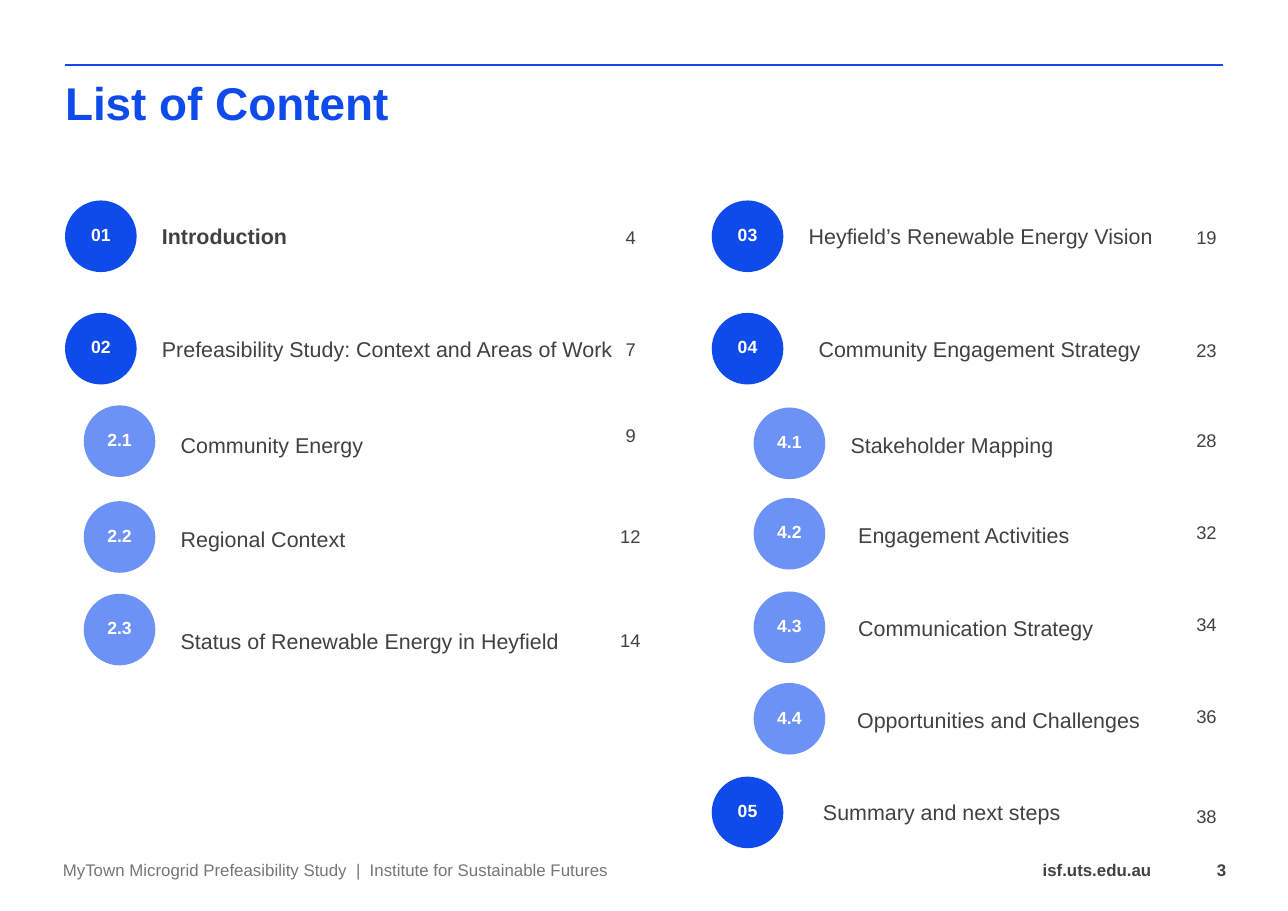
from pptx import Presentation
from pptx.dml.color import RGBColor
from pptx.enum.shapes import MSO_CONNECTOR as Connector, MSO_SHAPE as Shape
from pptx.enum.text import MSO_ANCHOR as Anchor, PP_ALIGN as Align
from pptx.oxml.ns import qn
from pptx.util import Inches, Pt
from lxml import etree

WIDTH, HEIGHT = 11.69, 8.27
MARGIN = 0.59
CONTENT_WIDTH = WIDTH - 2 * MARGIN
BADGE = 0.65
HEADING_INDENT = 0.88
FONT = "Arial"
COLOURS = {
    "main": "0F4BEB",
    "sub": "6C92F6",
    "text": "414042",
    "footer": "767676",
    "white": "FFFFFF",
}

TITLE = "List of Content"
FOOTER = "MyTown Microgrid Prefeasibility Study  |  Institute for Sustainable Futures"
WEBSITE = "isf.uts.edu.au"
PAGE_NUMBER = "3"

# Each entry: number, heading, page, badge top, heading shift (right, down), page drop
COLUMNS = [
    {
        "main_left": MARGIN, "sub_left": 0.76, "page_left": 5.53, "digit_shift": 0.05,
        "entries": [
            ("01", "Introduction", "4", 1.82, (0, 0), 0.18),
            ("02", "Prefeasibility Study: Context and Areas of Work", "7", 2.84, (0, 0), 0.18),
            ("2.1", "Community Energy", "9", 3.68, (0, 0.03), 0.12),
            ("2.2", "Regional Context", "12", 4.55, (0, 0.02), 0.17),
            ("2.3", "Status of Renewable Energy in Heyfield", "14", 5.39, (0, 0.1), 0.27),
        ],
    },
    {
        "main_left": 6.46, "sub_left": 6.84, "page_left": 10.76, "digit_shift": 0,
        "entries": [
            ("03", "Heyfield’s Renewable Energy Vision", "19", 1.82, (0, 0), 0.18),
            ("04", "Community Engagement Strategy", "23", 2.84, (0.09, 0), 0.19),
            ("4.1", "Stakeholder Mapping", "28", 3.7, (0, 0.01), 0.15),
            ("4.2", "Engagement Activities", "32", 4.52, (0.07, 0.01), 0.16),
            ("4.3", "Communication Strategy", "34", 5.37, (0.07, 0.01), 0.15),
            ("4.4", "Opportunities and Challenges", "36", 6.2, (0.06, 0.01), 0.15),
            ("05", "Summary and next steps", "38", 7.05, (0.13, 0), 0.21),
        ],
    },
]


def write(shape, text, size, colour="text", bold=False, align=Align.LEFT,
          anchor=Anchor.MIDDLE, inset=(0, 0), indent=0, spacing=None):
    frame = shape.text_frame
    frame.word_wrap = True
    frame.vertical_anchor = anchor
    frame.margin_left = frame.margin_right = Inches(inset[0])
    frame.margin_top = frame.margin_bottom = Inches(inset[1])
    frame.text = text
    paragraph = frame.paragraphs[0]
    paragraph.alignment = align
    if indent:
        properties = paragraph._p.get_or_add_pPr()
        properties.set("marL", str(Inches(indent)))
        properties.set("indent", "0")
    if spacing:
        paragraph.line_spacing = spacing
    font = paragraph.runs[0].font
    font.name, font.size, font.bold = FONT, Pt(size), bold
    font.color.rgb = RGBColor.from_string(COLOURS[colour])


def add_text(slide, box, text, size, **style):
    write(slide.shapes.add_textbox(*map(Inches, box)), text, size, **style)


def add_badge(slide, left, top, number, colour):
    badge = slide.shapes.add_shape(Shape.OVAL, *map(Inches, (left, top, BADGE, BADGE)))
    badge.shadow.inherit = False
    badge.fill.solid()
    badge.fill.fore_color.rgb = RGBColor.from_string(COLOURS[colour])
    badge.line.fill.background()
    write(badge, number, 11.5, colour="white", bold=True, align=Align.CENTER,
          spacing=Pt(11.5))


def add_entry(slide, column, number, heading, page, top, shift, page_drop):
    level = "sub" if "." in number else "main"
    left = column[f"{level}_left"]
    heading_width = 5 if level == "main" else 4.4
    heading_box = (left + shift[0], top + shift[1], heading_width, BADGE)
    add_text(slide, heading_box, heading, 14, bold=number == "01", indent=HEADING_INDENT)
    add_badge(slide, left, top, number, level)
    page_left = column["page_left"] + column["digit_shift"] * (len(page) == 1)
    add_text(slide, (page_left, top + page_drop, 0.5, 0.3), page, 12,
             anchor=Anchor.TOP, inset=(0.1, 0.05))


def add_rule(slide):
    rule = slide.shapes.add_connector(
        Connector.STRAIGHT, *map(Inches, (MARGIN, MARGIN, WIDTH - MARGIN, MARGIN)))
    rule.line.color.rgb = RGBColor.from_string(COLOURS["main"])
    rule.line.width = Pt(1.5)
    etree.SubElement(rule._element.spPr, qn("a:effectLst"))


def add_footer(slide):
    top, height = 7.74, 0.31
    add_text(slide, (0.57, top, 5.28, height), FOOTER, 11, colour="footer")
    add_text(slide, (8.49, top, 2.06, height), WEBSITE, 11, bold=True,
             align=Align.RIGHT, inset=(0.1, 0.05))
    add_text(slide, (10.66, top, 0.47, height), PAGE_NUMBER, 11, bold=True,
             align=Align.RIGHT)


def main():
    presentation = Presentation()
    presentation.slide_width, presentation.slide_height = Inches(WIDTH), Inches(HEIGHT)
    slide = presentation.slides.add_slide(presentation.slide_layouts[5])
    add_rule(slide)

    title = slide.shapes.title
    title.left, title.top, title.width, title.height = map(
        Inches, (MARGIN, 0.73, CONTENT_WIDTH, 0.55))
    write(title, TITLE, 30, colour="main", bold=True, anchor=Anchor.TOP, spacing=0.9)

    for column in COLUMNS:
        for entry in column["entries"]:
            add_entry(slide, column, *entry)
    add_footer(slide)
    presentation.save("out.pptx")


if __name__ == "__main__":
    main()
